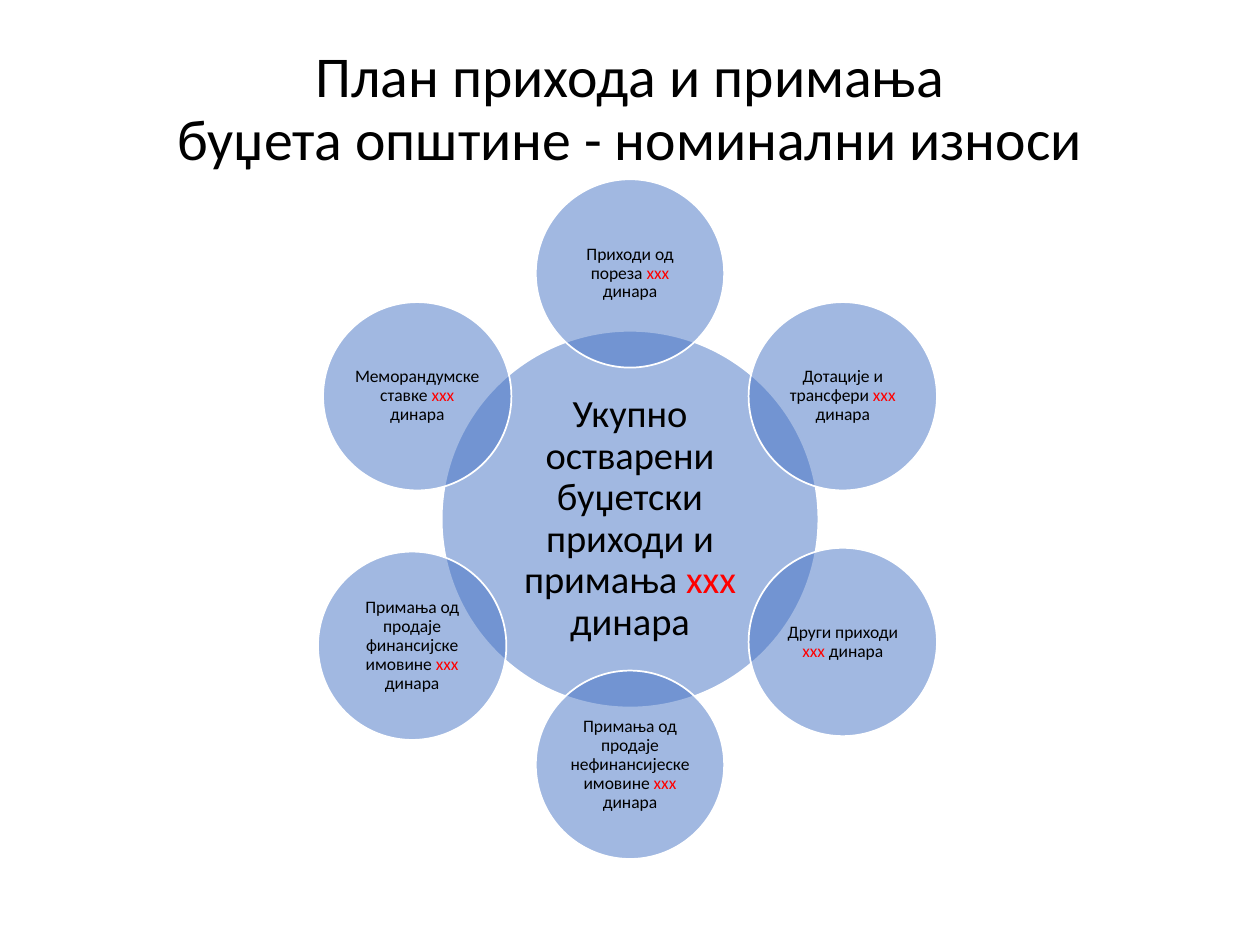
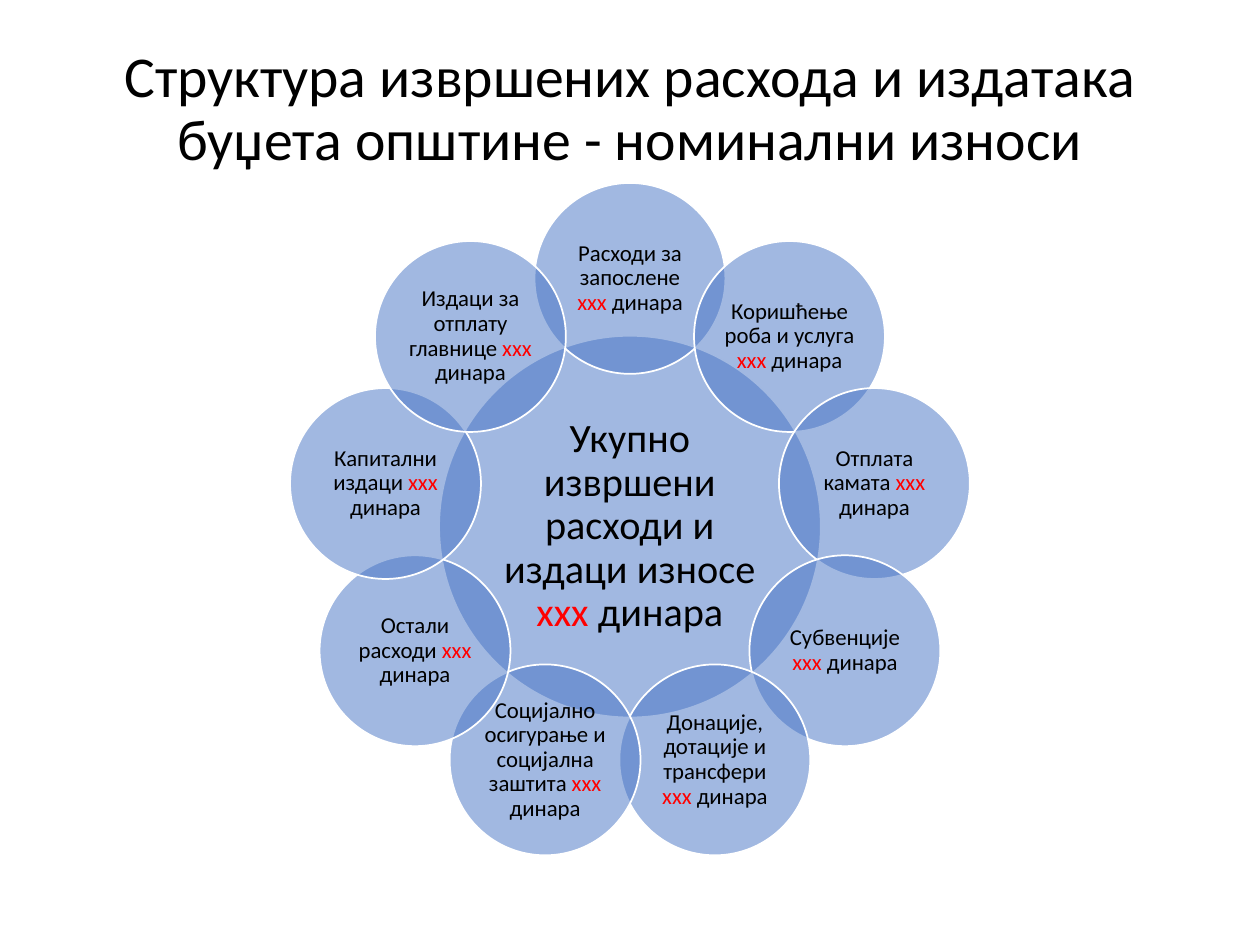
from math import cos, radians, sin

from lxml import etree
from pptx import Presentation
from pptx.dml.color import RGBColor
from pptx.enum.shapes import MSO_SHAPE
from pptx.enum.text import MSO_ANCHOR, PP_ALIGN
from pptx.oxml.ns import qn
from pptx.util import Inches, Pt

OVAL = MSO_SHAPE.OVAL
CENTER = PP_ALIGN.CENTER
MIDDLE = MSO_ANCHOR.MIDDLE
BOTTOM = MSO_ANCHOR.BOTTOM

BLUE = RGBColor(0x44, 0x72, 0xC4)
WHITE = RGBColor(0xFF, 0xFF, 0xFF)
BLACK = RGBColor(0, 0, 0)
RED = RGBColor(0xFF, 0, 0)

FONT = "Calibri"
BLANK_LAYOUT = 6
MIDDLE_X = 5
HUB_INSET = 0.03
AMOUNT = "ххх"
CURRENCY = " динара"

FINANCIAL_ASSETS = "Примања од продаје финансијске имовине "
REVENUES = [
    "Приходи од пореза ",
    "Дотације и трансфери ",
    "Други приходи ",
    "Примања од продаје нефинансијеске имовине ",
    FINANCIAL_ASSETS,
    "Меморандумске ставке ",
]
EXPENSES = [
    "Расходи за запослене ",
    "Коришћење роба и услуга ",
    "Отплата камата ",
    "Субвенције ",
    "Донације, дотације и трансфери ",
    "Социјално осигурање и социјална заштита ",
    "Остали расходи ",
    "Капитални издаци ",
    "Издаци за отплату главнице ",
]


class BudgetDeck:
    """Builds budget pages that share one title style and one circle diagram style."""

    def __init__(self):
        self.deck = Presentation()
        self.deck.slide_width = Inches(10)
        self.deck.slide_height = Inches(7.5)
        self.page = None
        self.diagram = None

    def add_page(self, title_lines):
        self.page = self.deck.slides.add_slide(self.deck.slide_layouts[BLANK_LAYOUT])
        self.add_title(title_lines)
        self.diagram = self.page.shapes.add_group_shape()

    def add_title(self, lines):
        box = self.page.shapes.add_textbox(Inches(0.3), Inches(0.25), Inches(9.4), Inches(1.17))
        para = self.start_text(box.text_frame, BOTTOM)
        for index, line in enumerate(lines):
            if index:
                para.add_line_break()
            self.add_span(para, line, 33)

    def start_text(self, frame, anchor):
        frame.word_wrap = True
        frame.vertical_anchor = anchor
        para = frame.paragraphs[0]
        para.alignment = CENTER
        para.line_spacing = 0.9
        return para

    def add_span(self, para, text, size, color=BLACK):
        span = para.add_run()
        span.text = text
        span.font.name = FONT
        span.font.size = Pt(size)
        span.font.color.rgb = color

    def add_circle(self, center_x, center_y, diameter, label, size, inset):
        circle = self.diagram.shapes.add_shape(
            OVAL,
            Inches(center_x - diameter / 2),
            Inches(center_y - diameter / 2),
            Inches(diameter),
            Inches(diameter),
        )
        circle.shadow.inherit = False
        circle.fill.solid()
        circle.fill.fore_color.rgb = BLUE
        fill_color = circle.element.spPr.find(qn("a:solidFill"))[0]
        etree.SubElement(fill_color, qn("a:alpha"), val="50000")
        circle.line.color.rgb = WHITE
        circle.line.width = Pt(1)

        frame = circle.text_frame
        frame.margin_left = frame.margin_right = Inches(inset)
        frame.margin_top = frame.margin_bottom = Inches(inset)
        para = self.start_text(frame, MIDDLE)
        self.add_span(para, label, size)
        self.add_span(para, AMOUNT, size, RED)
        self.add_span(para, CURRENCY, size)

    def add_radial_diagram(self, hub, hub_size, petals, petal_size, petal_inset,
                           middle_y, diameter, radius, nudges=None):
        self.add_circle(MIDDLE_X, middle_y, diameter, hub, hub_size, HUB_INSET)
        for index, label in enumerate(petals):
            angle = radians(360 / len(petals) * index)
            shift_x, shift_y = (nudges or {}).get(label, (0, 0))
            self.add_circle(
                MIDDLE_X + radius * sin(angle) + shift_x,
                middle_y - radius * cos(angle) + shift_y,
                diameter / 2, label, petal_size, petal_inset,
            )

    def save(self):
        self.deck.save("out.pptx")


def main():
    budget = BudgetDeck()

    budget.add_page(["План прихода и примања", "буџета општине - номинални износи"])
    budget.add_radial_diagram(
        "Укупно остварени буџетски приходи и примања ", 22, REVENUES, 10, 0.01,
        middle_y=4.12, diameter=2.99, radius=1.95,
        nudges={FINANCIAL_ASSETS: (-0.04, 0.03)},
    )

    budget.add_page(["Структура извршених расхода и издатака буџета општине - номинални износи"])
    budget.add_radial_diagram(
        "Укупно извршени расходи и издаци износе ", 23, EXPENSES, 13, 0.02,
        middle_y=4.18, diameter=3.03, radius=1.97,
    )

    budget.save()


if __name__ == "__main__":
    main()
